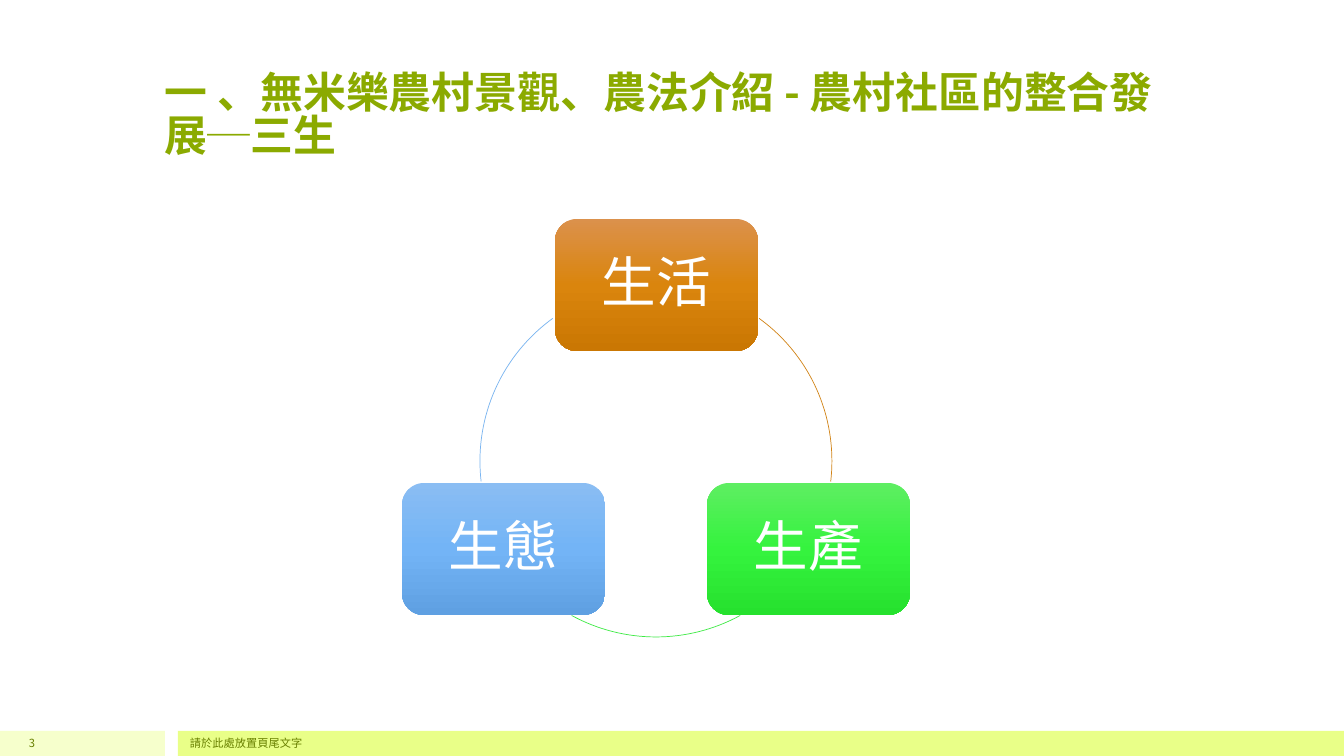
from copy import deepcopy

from pptx import Presentation
from pptx.dml.color import RGBColor
from pptx.enum.shapes import MSO_SHAPE
from pptx.enum.text import MSO_ANCHOR, PP_ALIGN
from pptx.oxml.ns import qn
from pptx.util import Emu, Pt

RECT, ROUND, ARC = MSO_SHAPE.RECTANGLE, MSO_SHAPE.ROUNDED_RECTANGLE, MSO_SHAPE.ARC
LEFT, MID, RIGHT = PP_ALIGN.LEFT, PP_ALIGN.CENTER, PP_ALIGN.RIGHT
CENTER, BOTTOM = MSO_ANCHOR.MIDDLE, MSO_ANCHOR.BOTTOM

FONT = "Noto Sans CJK TC"
WHITE = RGBColor(0xFF, 0xFF, 0xFF)
OLIVE = RGBColor(0x8B, 0xAA, 0x00)
MOSS = RGBColor(0x68, 0x80, 0x00)
PALE = RGBColor(0xF6, 0xFF, 0xCC)
LIME = RGBColor(0xE9, 0xFF, 0x88)
ORANGE = [RGBColor(0xDB, 0x91, 0x4C), RGBColor(0xDA, 0x85, 0x0D), RGBColor(0xCA, 0x77, 0x03)]
GREEN = [RGBColor(0x5E, 0xEE, 0x62), RGBColor(0x35, 0xF3, 0x3E), RGBColor(0x26, 0xE1, 0x2E)]
BLUE = [RGBColor(0x8A, 0xBD, 0xF3), RGBColor(0x73, 0xB4, 0xF6), RGBColor(0x5F, 0xA0, 0xE2)]
RUST = RGBColor(0xD1, 0x83, 0x16)
LEAF = RGBColor(0x3E, 0xEA, 0x45)
SKY = RGBColor(0x79, 0xB4, 0xF0)

CARD_W, CARD_H = 203, 132
RING = (480, 285, 352, 352)

# label, left, top, gradient, arc colour, arc start and end in degrees
CARDS = [
    ("生活", 555, 219, ORANGE, RUST, 305.9, 6.7),
    ("生產", 707, 483, GREEN, LEAF, 61.4, 118.6),
    ("生態", 402, 483, BLUE, SKY, 173.3, 234.1),
]


def px(n):
    return Emu(round(n * 914400 / 100.8))


def add_form(slide, kind, box):
    form = slide.shapes.add_shape(kind, *map(px, box))
    form.shadow.inherit = False
    return form


def add_bar(slide, box, color):
    bar = add_form(slide, RECT, box)
    bar.fill.solid()
    bar.fill.fore_color.rgb = color
    bar.line.fill.background()


def write(form, text, size, color, align=LEFT, anchor=CENTER, spacing=1.0, bold=False, pad=0):
    """Put one styled paragraph into a shape; pad is the side inset."""
    frame = form.text_frame
    layout = {"word_wrap": True, "vertical_anchor": anchor, "margin_left": px(pad),
              "margin_right": px(pad), "margin_top": 0, "margin_bottom": 0}
    for name, value in layout.items():
        setattr(frame, name, value)
    para = frame.paragraphs[0]
    para.alignment = align
    para.line_spacing = spacing
    run = para.add_run()
    run.text = text
    for name, value in {"name": FONT, "size": Pt(size), "bold": bold}.items():
        setattr(run.font, name, value)
    run.font.color.rgb = color
    east = run.font._element.makeelement(qn("a:ea"), {"typeface": FONT})
    run.font._element.append(east)


def add_text(slide, box, *args, **style):
    write(slide.shapes.add_textbox(*map(px, box)), *args, **style)


def shade(form, colors):
    """Fill from top to bottom with evenly spaced colours."""
    fill = form.fill
    fill.gradient()
    fill.gradient_angle = 270
    stops = form._element.spPr.find(".//" + qn("a:gsLst"))
    while len(stops) < len(colors):
        stops.append(deepcopy(stops[0]))
    for i, (stop, color) in enumerate(zip(fill.gradient_stops, colors)):
        stop.color.rgb = color
        stop.position = i / (len(colors) - 1)


def add_card(slide, label, left, top, colors):
    card = add_form(slide, ROUND, (left, top, CARD_W, CARD_H))
    shade(card, colors)
    card.line.fill.background()
    write(card, label, 39, WHITE, align=MID, spacing=0.9, pad=16)


def add_arc(slide, color, start, end):
    arc = add_form(slide, ARC, RING)
    for i, angle in enumerate((start, end)):
        arc.adjustments[i] = angle * 0.6
    arc.fill.background()
    arc.line.color.rgb = color
    arc.line.width = Pt(0.5)


def main():
    deck = Presentation()
    deck.slide_width, deck.slide_height = px(1344), px(756)
    slide = deck.slides.add_slide(deck.slide_layouts[6])
    add_bar(slide, (0, 731, 165, 25), PALE)
    add_bar(slide, (178, 731, 1166, 25), LIME)
    add_text(slide, (155, 30, 1033, 130), "一 、無米樂農村景觀、農法介紹 - 農村社區的整合發展─三生",
             30.6, OLIVE, anchor=BOTTOM, spacing=0.83, bold=True, pad=10)
    for label, left, top, colors, color, start, end in CARDS:
        add_card(slide, label, left, top, colors)
        add_arc(slide, color, start, end)
    add_text(slide, (180, 731, 1008, 25), "請於此處放置頁尾文字", 8, MOSS, pad=10)
    add_text(slide, (0, 731, 45, 25), "3", 8, MOSS, align=RIGHT, pad=10)
    deck.save("out.pptx")


if __name__ == "__main__":
    main()
